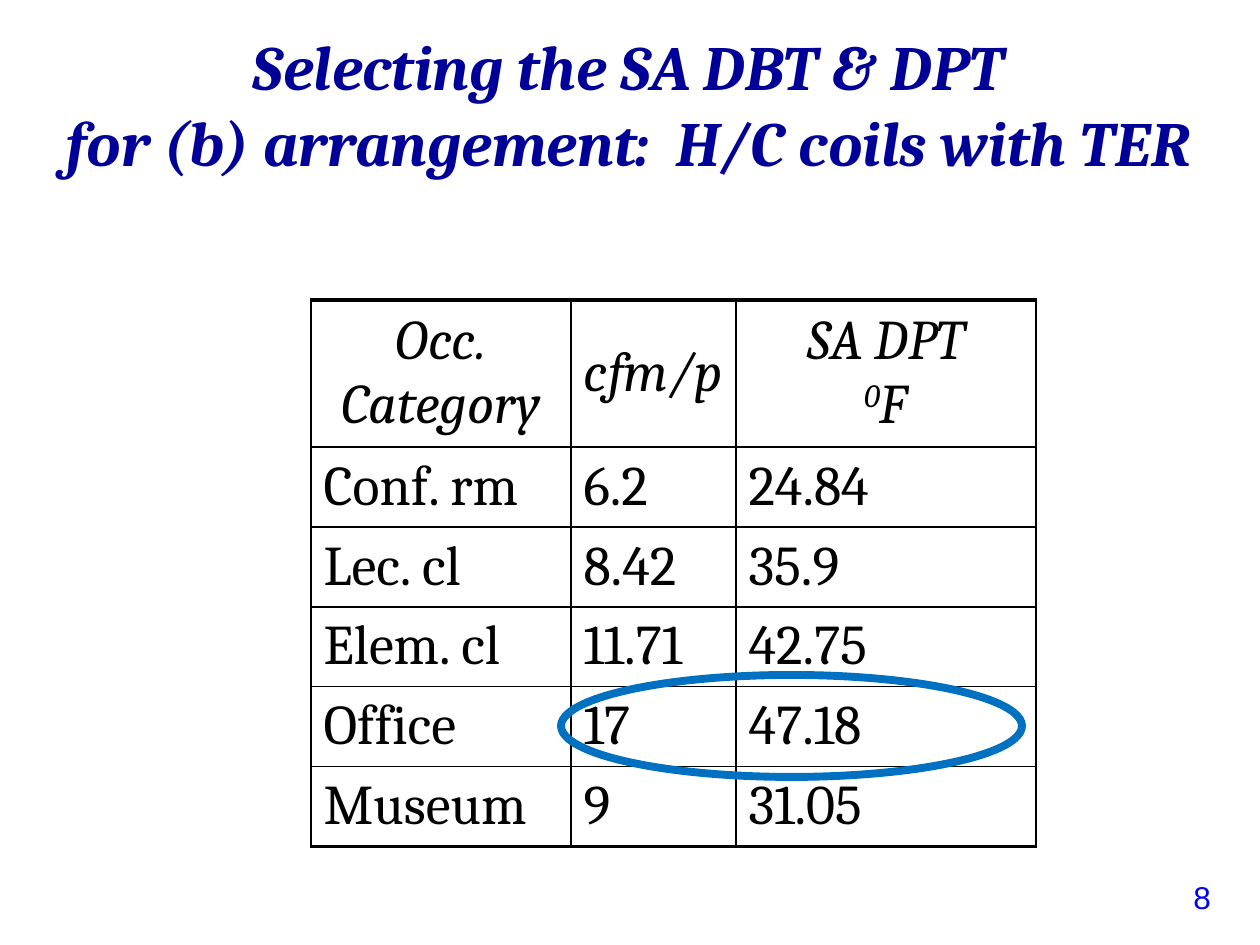
from pptx import Presentation
from pptx.dml.color import RGBColor
from pptx.enum.shapes import MSO_SHAPE as Shape
from pptx.enum.text import MSO_ANCHOR as Anchor, PP_ALIGN as Align
from pptx.oxml import parse_xml
from pptx.oxml.ns import nsdecls
from pptx.util import Pt

PX = 914400 // 126
BLACK = "000000"


def emu(px):
    return px * PX


def color(text):
    return RGBColor.from_string(text)


class Page:
    def __init__(self, slide, font="Cambria"):
        self.slide = slide
        self.font = font

    def fill(self, frame, lines, size, tint=BLACK, bold=False, italic=False,
             align=Align.LEFT, font=None):
        """Fill a frame; each line is a list of (text, baseline) runs."""
        para = frame.paragraphs[0]
        para.alignment = align
        for i, line in enumerate(lines):
            if i:
                para.add_line_break()
            for text, base in line:
                run = para.add_run()
                run.text = text
                style = run.font
                style.name = font or self.font
                style.size = Pt(size)
                style.bold, style.italic = bold, italic
                style.color.rgb = color(tint)
                if base:
                    run._r.get_or_add_rPr().set("baseline", str(base))

    def text(self, box, lines, size, anchor=Anchor.TOP, **style):
        frame = self.slide.shapes.add_textbox(*map(emu, box)).text_frame
        frame.word_wrap = True
        frame.vertical_anchor = anchor
        self.fill(frame, lines, size, **style)

    def border(self, cell, sides):
        """Draw cell edges from a dict of side letter to points."""
        props = cell._tc.get_or_add_tcPr()
        for i, (side, width) in enumerate(sides.items()):
            props.insert(i, parse_xml(
                f'<a:ln{side} {nsdecls("a")} w="{Pt(width)}"><a:solidFill>'
                f'<a:srgbClr val="{BLACK}"/></a:solidFill></a:ln{side}>'))

    def table(self, left, top, cols, rows, cells, size):
        box = (left, top, sum(cols), sum(rows))
        grid = self.slide.shapes.add_table(
            len(rows), len(cols), *map(emu, box)).table
        grid.first_row = grid.horz_banding = False
        for col, width in zip(grid.columns, cols):
            col.width = emu(width)
        last = len(rows) - 1
        for r, (row, height) in enumerate(zip(grid.rows, rows)):
            row.height = emu(height)
            head = r == 0
            for cell, lines in zip(row.cells, cells[r]):
                cell.fill.background()
                cell.vertical_anchor = Anchor.MIDDLE
                self.fill(cell.text_frame, lines, size, italic=head,
                          align=Align.CENTER if head else Align.LEFT)
                self.border(cell, {"L": 1, "R": 1, "T": 2.25 if head else 1,
                                   "B": 2.25 if r == last else 1})

    def ring(self, box, tint, width):
        oval = self.slide.shapes.add_shape(Shape.OVAL, *map(emu, box))
        oval.shadow.inherit = False
        oval.fill.background()
        oval.line.color.rgb = color(tint)
        oval.line.width = Pt(width)


def plain(*lines):
    return [[(line, 0)] for line in lines]


HEAD = [plain("Occ.", "Category"), plain("cfm/p"),
        [[("SA DPT", 0)], [("0", 30000), ("F", 0)]]]
DATA = [
    ("Conf. rm", "6.2", "24.84"),
    ("Lec. cl", "8.42", "35.9"),
    ("Elem. cl", "11.71", "42.75"),
    ("Office", "17", "47.18"),
    ("Museum", "9", "31.05"),
]


def main():
    deck = Presentation()
    deck.slide_width, deck.slide_height = emu(1260), emu(945)
    page = Page(deck.slides.add_slide(deck.slide_layouts[6]))
    page.text((1181, 872, 79, 50), plain("8"), 18, tint="0000FF", font="Arial")
    page.text((35, 18, 1187, 171),
              plain("Selecting the SA DBT & DPT",
                    "for (b) arrangement:  H/C coils with TER"),
              36, anchor=Anchor.MIDDLE, tint="000099", bold=True, italic=True,
              align=Align.CENTER)
    cells = [HEAD] + [[plain(item) for item in row] for row in DATA]
    page.table(311, 300, [260, 165, 300], [142] + [77] * len(DATA), cells, 32)
    page.ring((561, 675, 461, 102), "0070C0", 4.5)
    deck.save("out.pptx")


if __name__ == "__main__":
    main()
